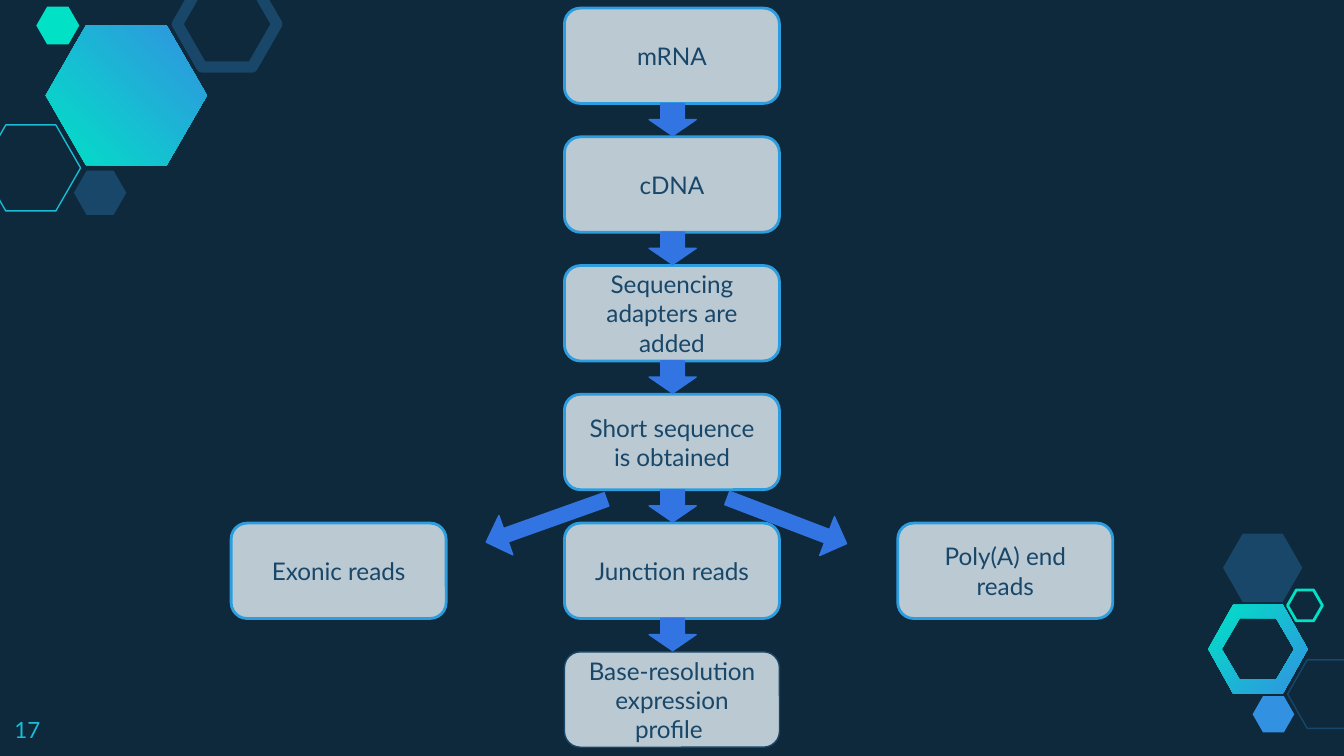
from pptx import Presentation
from pptx.dml.color import RGBColor
from pptx.enum.shapes import MSO_SHAPE as Shape
from pptx.enum.text import MSO_ANCHOR as Anchor, PP_ALIGN as Align
from pptx.util import Inches, Pt

WIDTH = 10
HEIGHT = WIDTH * 9 / 16
NAVY, STEEL, PALE = "0E293C", "184769", "BBC9D3"
BLUE, SKY, AZURE, CYAN, TEAL = "3274E1", "3292E1", "2C9DDE", "19BBD5", "00E1C6"
FONT = "Lato"

BOX_WIDTH, BOX_HEIGHT = 1.6, 0.71
TOP, LAST_TOP, ROWS = 0.06, 4.85, 6
ROW_STEP = (LAST_TOP - TOP) / (ROWS - 1)
COLUMN_STEP = 2.48
# column, row, text, line colour, line width
STEPS = [
    (0, 0, "mRNA", AZURE, 1.5),
    (0, 1, "cDNA", AZURE, 1.5),
    (0, 2, "Sequencing adapters are added", AZURE, 1.5),
    (0, 3, "Short sequence is obtained", AZURE, 1.5),
    (-1, 4, "Exonic reads", AZURE, 1.5),
    (0, 4, "Junction reads", AZURE, 1.5),
    (1, 4, "Poly(A) end reads", AZURE, 1.5),
    (0, 5, "Base-resolution expression profile ", STEEL, 0.75),
]
BRANCHES = [(3.91, 70.4), (5.7, 290.9)]
# left, top, width, height, fill, line colour, line width
HEXAGONS = [
    (-0.14, 0.93, 0.74, 0.64, None, CYAN, 0.75),
    (0.55, 1.27, 0.39, 0.33, STEEL, None, 0),
    (1.32, -0.14, 0.74, 0.64, None, STEEL, 6),
    (0.27, 0.05, 0.32, 0.28, TEAL, None, 0),
    (9.58, 4.91, 0.59, 0.51, None, STEEL, 0.75),
    (9.32, 5.18, 0.31, 0.27, SKY, None, 0),
    (9.1, 3.97, 0.59, 0.51, STEEL, None, 0),
    (9.58, 4.39, 0.26, 0.23, None, TEAL, 1.5),
]
BIG_HEXAGON = (0.94, 0.71), [(0.6, 0.52)], 45
RING = (9.36, 4.83), [(0.37, 0.33), (0.27, 0.23)], 315
CORNERS = [(1, 0), (0.5, 1), (-0.5, 1), (-1, 0), (-0.5, -1), (0.5, -1)]


def color(value):
    """Turn a hex string into a colour."""
    return RGBColor.from_string(value)


def style(shape, fill=None, line=None, width=0):
    """Set the fill and outline of a shape and drop its shadow."""
    shape.shadow.inherit = False
    if fill:
        shape.fill.solid()
        shape.fill.fore_color.rgb = color(fill)
    else:
        shape.fill.background()
    if line:
        shape.line.color.rgb = color(line)
        shape.line.width = Pt(width)
    else:
        shape.line.fill.background()


def add_shape(slide, kind, box, adjustments, *look):
    """Add a styled preset shape."""
    shape = slide.shapes.add_shape(kind, *map(Inches, box))
    for index, value in enumerate(adjustments):
        shape.adjustments[index] = value
    style(shape, *look)
    return shape


def write(shape, text, size, ink, align):
    """Put one formatted paragraph into a shape."""
    frame = shape.text_frame
    frame.text = text
    frame.word_wrap = True
    frame.margin_left = frame.margin_right = Inches(0.1)
    frame.margin_top = frame.margin_bottom = Inches(0.1)
    paragraph = frame.paragraphs[0]
    paragraph.alignment = align
    font = paragraph.runs[0].font
    font.name, font.size, font.color.rgb = FONT, Pt(size), color(ink)


def add_gradient_hexagon(slide, center, radii, angle):
    """Draw a gradient hexagon; a second radius pair cuts a hole."""
    contours = [
        [(Inches(center[0] + x * across), Inches(center[1] + y * down)) for x, y in CORNERS]
        for across, down in radii
    ]
    builder = slide.shapes.build_freeform(*contours[0][0])
    builder.add_line_segments(contours[0][1:], close=True)
    for hole in contours[1:]:
        builder.move_to(*hole[0])
        builder.add_line_segments(hole[:0:-1], close=True)
    hexagon = builder.convert_to_shape()
    style(hexagon)
    hexagon.fill.gradient()
    hexagon.fill.gradient_angle = angle
    for stop, value in zip(hexagon.fill.gradient_stops, (TEAL, SKY)):
        stop.color.rgb = color(value)


def add_decoration(slide):
    """Add the hexagons in the two corners."""
    for hexagon in (RING, BIG_HEXAGON):
        add_gradient_hexagon(slide, *hexagon)
    for *box, fill, line, width in HEXAGONS:
        add_shape(slide, Shape.HEXAGON, box, [0.287], fill, line, width)


def add_flow(slide):
    """Add the steps and the arrows between them."""
    center = WIDTH / 2
    for column, row, text, line, width in STEPS:
        left = center - BOX_WIDTH / 2 + column * COLUMN_STEP
        box = (left, TOP + row * ROW_STEP, BOX_WIDTH, BOX_HEIGHT)
        step = add_shape(slide, Shape.ROUNDED_RECTANGLE, box, [0.167], PALE, line, width)
        step.text_frame.vertical_anchor = Anchor.MIDDLE
        write(step, text, 13, STEEL, Align.CENTER)
    for row in range(ROWS - 1):
        box = (center - 0.17, TOP + BOX_HEIGHT + row * ROW_STEP, 0.35, 0.24)
        add_shape(slide, Shape.DOWN_ARROW, box, [0.5, 0.5], BLUE, BLUE, 0.75)
    for left, rotation in BRANCHES:
        box = (left, 3.4, 0.31, 0.95)
        arrow = add_shape(slide, Shape.DOWN_ARROW, box, [0.34, 0.5], BLUE, BLUE, 0.75)
        arrow.rotation = rotation


def main():
    """Build and save the slide."""
    presentation = Presentation()
    presentation.slide_width, presentation.slide_height = Inches(WIDTH), Inches(HEIGHT)
    slide = presentation.slides.add_slide(presentation.slide_layouts[6])
    slide.background.fill.solid()
    slide.background.fill.fore_color.rgb = color(NAVY)
    add_decoration(slide)
    number = slide.shapes.add_textbox(*map(Inches, (0.01, 5.23, 0.6, 0.39)))
    write(number, "17", 12, CYAN, Align.LEFT)
    add_flow(slide)
    presentation.save("out.pptx")


if __name__ == "__main__":
    main()
